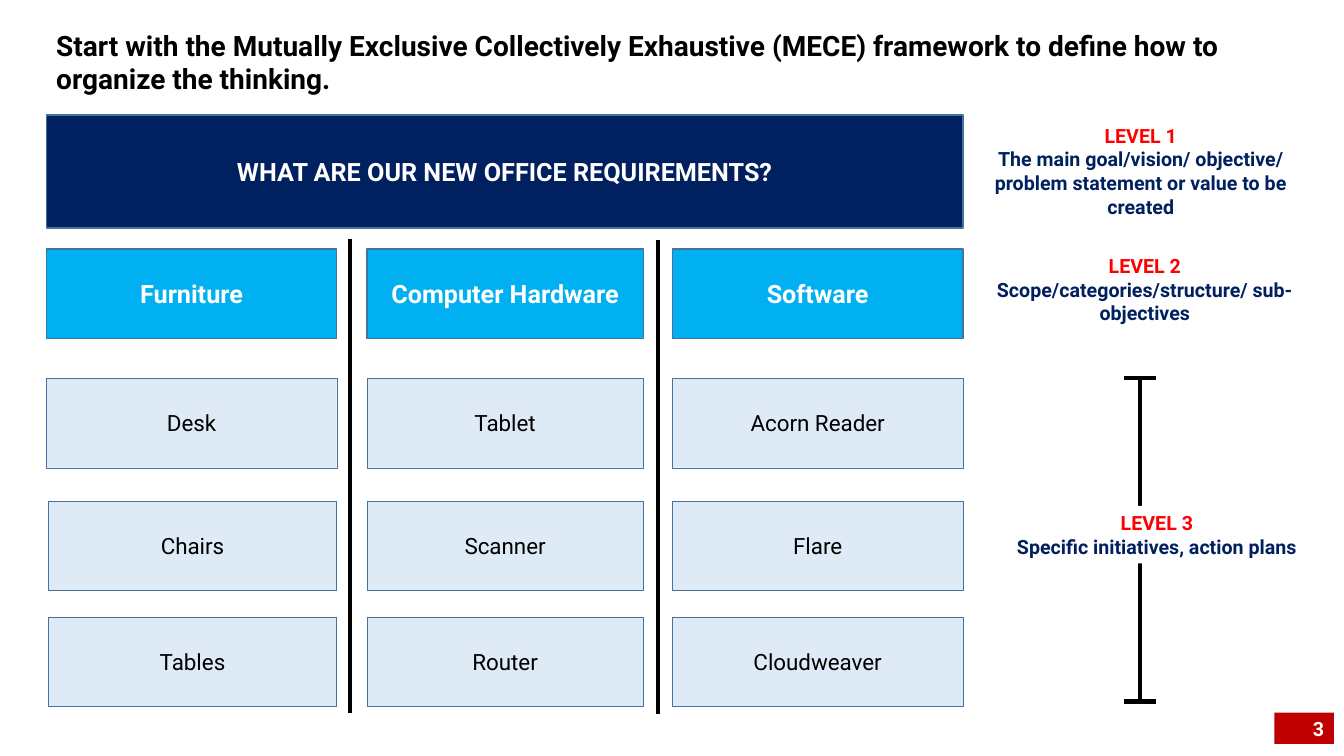
from dataclasses import dataclass

from lxml import etree
from pptx import Presentation
from pptx.dml.color import RGBColor
from pptx.enum.shapes import MSO_CONNECTOR, MSO_SHAPE
from pptx.enum.text import MSO_ANCHOR, PP_ALIGN
from pptx.oxml.ns import qn
from pptx.util import Pt

LEFT, CENTER, RIGHT = PP_ALIGN.LEFT, PP_ALIGN.CENTER, PP_ALIGN.RIGHT
TOP, MIDDLE = MSO_ANCHOR.TOP, MSO_ANCHOR.MIDDLE
RECT, PLATE, CHEVRON = MSO_SHAPE.RECTANGLE, MSO_SHAPE.PENTAGON, MSO_SHAPE.CHEVRON
STRAIGHT = MSO_CONNECTOR.STRAIGHT
SCALE = 9144  # EMU per px, 100 px to the inch


@dataclass(frozen=True)
class Theme:
    font: str = "Roboto"
    black: str = "000000"
    white: str = "FFFFFF"
    navy: str = "002060"
    sky: str = "00B0F0"
    pale: str = "DEEBF7"
    edge: str = "43739E"
    red: str = "FF0000"
    badge: str = "C00000"
    title: int = 20
    head: int = 18
    item: int = 16
    note: int = 14
    rule: int = 3


THEME = Theme()

COLUMNS = [
    ("Furniture", PLATE, 0, 288, ["Desk", "Chairs", "Tables"]),
    ("Computer Hardware", CHEVRON, 318, 274, ["Tablet", "Scanner", "Router"]),
    ("Software", CHEVRON, 621, 288, ["Acorn Reader", "Flare", "Cloudweaver"]),
]
ROWS = [(128, 0), (250, 2), (365, 2)]  # top, indent of the first column
CELL = 89


def px(*sizes):
    return [round(size * SCALE) for size in sizes]


def rgb(code):
    return RGBColor.from_string(code)


def write(shape, *lines, size=THEME.note, color=THEME.black, colors=None,
          bold=True, align=CENTER, anchor=TOP):
    """Set one paragraph per line; colors gives each line its own colour."""
    frame = shape.text_frame
    frame.word_wrap = True
    frame.vertical_anchor = anchor
    for i, line in enumerate(lines):
        para = frame.add_paragraph() if i else frame.paragraphs[0]
        para.alignment = align
        run = para.add_run()
        run.text = line
        font = run.font
        font.name, font.size, font.bold = THEME.font, Pt(size), bold
        font.color.rgb = rgb(colors[i] if colors else color)


def block(slide, kind, box, fill, width=0):
    """Draw a filled shape, outlined when width is given."""
    shape = slide.shapes.add_shape(kind, *px(*box))
    shape.shadow.inherit = False
    if kind != RECT:
        shape.adjustments[0] = 0
    shape.fill.solid()
    shape.fill.fore_color.rgb = rgb(fill)
    if width:
        shape.line.color.rgb = rgb(THEME.edge)
        shape.line.width = Pt(width)
    else:
        shape.line.fill.background()
    return shape


def rule(slide, x1, y1, x2, y2):
    line = slide.shapes.add_connector(STRAIGHT, *px(x1, y1, x2, y2))
    line.line.color.rgb = rgb(THEME.black)
    line.line.width = Pt(THEME.rule)
    etree.SubElement(line._element.spPr, qn("a:effectLst"))


def title(slide, box, text):
    write(slide.shapes.add_textbox(*px(*box)), text, size=THEME.title, align=LEFT)


def banner(slide, box, text):
    shape = block(slide, PLATE, box, THEME.navy, 1)
    write(shape, text, size=THEME.head, color=THEME.white, anchor=MIDDLE)


def grid(slide, box):
    """Draw the category heads, their items and the rules between columns."""
    left, top, _, height = box
    for i, (name, kind, shift, width, items) in enumerate(COLUMNS):
        x = left + shift
        head = block(slide, kind, (x, top, width, CELL), THEME.sky, 1)
        write(head, name, size=THEME.head, color=THEME.white, anchor=MIDDLE)
        for item, (drop, indent) in zip(items, ROWS):
            inset = 0 if i else indent
            place = (x + inset, top + drop, width - inset, CELL)
            cell = block(slide, RECT, place, THEME.pale, 0.25)
            write(cell, item, size=THEME.item, bold=False, anchor=MIDDLE)
    for shift, drop in ((301, -10), (607, -9)):
        x, y = left + shift, top + drop
        rule(slide, x, y, x, y + height + 16)


def level(slide, box, number, text, filled=False):
    if filled:
        shape = block(slide, RECT, box, THEME.white)
    else:
        shape = slide.shapes.add_textbox(*px(*box))
    write(shape, f"LEVEL {number}", text, colors=(THEME.red, THEME.navy))


def span(slide, box):
    """Draw an upright bar with a cap at each end."""
    left, top, width, height = box
    mid = left + width // 2
    rule(slide, mid, top, mid, top + height)
    for y in (top, top + height):
        rule(slide, left, y, left + width, y)


def page(slide, box, number):
    shape = block(slide, RECT, box, THEME.badge)
    write(shape, number, color=THEME.white, align=RIGHT, anchor=MIDDLE)


def main():
    deck = Presentation()
    deck.slide_width, deck.slide_height = px(1333, 750)
    slide = deck.slides.add_slide(deck.slide_layouts[6])
    title(slide, (46, 23, 1237, 77),
          "Start with the Mutually Exclusive Collectively Exhaustive (MECE) "
          "framework to define how to organize the thinking.")
    banner(slide, (46, 114, 909, 112), "WHAT ARE OUR NEW OFFICE REQUIREMENTS?")
    grid(slide, (46, 247, 909, 454))
    level(slide, (965, 118, 333, 104), 1,
          "The main goal/vision/ objective/ problem statement or value to be created")
    level(slide, (969, 247, 333, 81), 2,
          "Scope/categories/structure/ sub-objectives")
    span(slide, (1115, 375, 32, 321))
    level(slide, (981, 502, 333, 57), 3,
          "Specific initiatives, action plans", filled=True)
    page(slide, (1264, 707, 59, 31), "3")
    deck.save("out.pptx")


if __name__ == "__main__":
    main()
